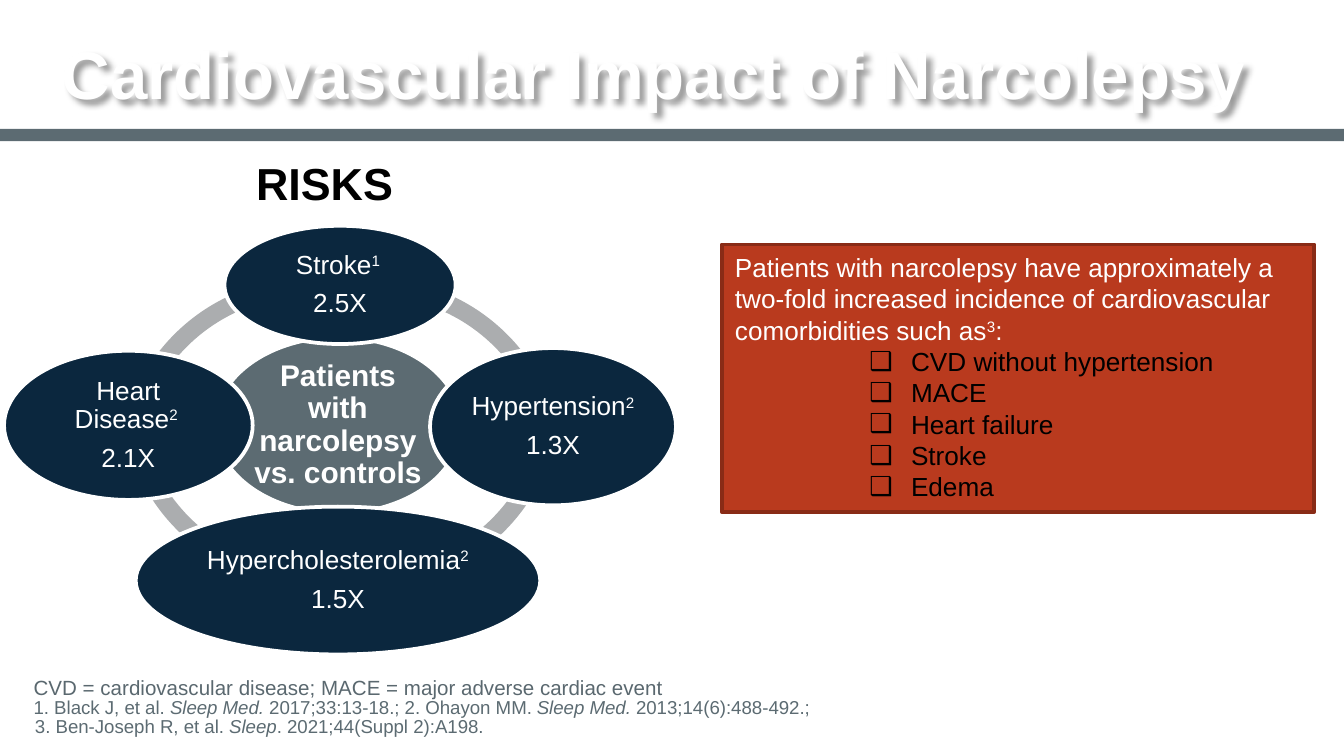
"""Build the slide on the cardiovascular impact of narcolepsy."""
from lxml import etree
from pptx import Presentation
from pptx.dml.color import RGBColor
from pptx.enum.shapes import MSO_SHAPE as Preset
from pptx.enum.text import MSO_ANCHOR as Anchor, MSO_AUTO_SIZE as AutoSize, PP_ALIGN as Align
from pptx.oxml.ns import qn
from pptx.util import Inches, Pt

COLORS = {
    "white": "FFFFFF", "black": "000000", "slate": "5C6B72", "note": "5A686F",
    "navy": "0B273E", "arc": "ABADAF", "red": "B93A1E", "red_edge": "892B16",
}
FONT = "Arial"
TITLE = "Cardiovascular Impact of Narcolepsy"
ARCS = [
    (0.88, 2.07, 116.1, 167.61),
    (0.9, 1.51, 49.22, 102.2),
    (1.32, 1.52, 5.7, 59.49),
    (1.34, 2.07, 156.39, 207.9),
]
RISKS = [
    ((1.67, 1.68, 1.72, 0.88), "Stroke", "1 ", "2.5X"),
    ((3.2, 2.59, 1.83, 1.17), "Hypertension", "2", "1.3X"),
    ((1.01, 3.77, 3.01, 1.1), "Hypercholesterolemia", "2", "1.5X"),
    ((0.03, 2.61, 1.85, 1.11), "Heart Disease", "2 ", "2.1X"),
]
COMORBIDITIES = ["CVD without hypertension", "MACE", "Heart failure", "Stroke", "Edema"]
SUMMARY = ("Patients with narcolepsy have approximately a two-fold increased incidence "
           "of cardiovascular comorbidities such as")
ABBREVIATIONS = "CVD = cardiovascular disease; MACE = major adverse cardiac event"
REFERENCES = [
    ("1. Black J, et al. ", ""), ("Sleep Med.", "italic"),
    (" 2017;33:13-18.; 2. Ohayon MM. ", ""), ("Sleep Med.", "italic"),
    (" 2013;14(6):488-492.; ", ""), ("\n", ""),
    ("3. Ben-Joseph R, et al. ", ""), ("Sleep", "italic"),
    (". 2021;44(Suppl 2):A198.", ""),
]


class SlideBuilder:
    """Holds the style and the current slide."""

    def __init__(self, presentation):
        self.slide = presentation.slides.add_slide(presentation.slide_layouts[3])

    def color(self, name):
        return RGBColor.from_string(COLORS[name])

    def shape(self, preset, box, fill, line=None):
        shape = self.slide.shapes.add_shape(preset, *map(Inches, box))
        shape.shadow.inherit = False
        shape.fill.solid()
        shape.fill.fore_color.rgb = self.color(fill)
        if line:
            shape.line.color.rgb = self.color(line)
            shape.line.width = Pt(2)
        else:
            shape.line.fill.background()
        return shape

    def frame(self, shape, insets, anchor):
        frame = shape.text_frame
        frame.word_wrap = True
        frame.auto_size = AutoSize.NONE
        frame.vertical_anchor = anchor
        (frame.margin_left, frame.margin_top,
         frame.margin_right, frame.margin_bottom) = map(Inches, insets)
        return frame

    def placeholder(self, index, box, insets, anchor):
        shape = self.slide.placeholders[index]
        shape.left, shape.top, shape.width, shape.height = map(Inches, box)
        return self.frame(shape, insets, anchor)

    def paragraph(self, frame, runs, size, color, align=Align.LEFT, bold=False,
                  spacing=1, after=0, bullet=None, indent=(0, 0)):
        first = frame.paragraphs[0]
        paragraph = frame.add_paragraph() if first.runs else first
        properties = paragraph._p.get_or_add_pPr()
        properties.set("marL", str(Inches(indent[0])))
        properties.set("indent", str(Inches(indent[1])))
        if bullet:
            etree.SubElement(properties, qn("a:buFont"), typeface=FONT)
            etree.SubElement(properties, qn("a:buChar"), char=bullet)
        else:
            etree.SubElement(properties, qn("a:buNone"))
        paragraph.alignment = align
        paragraph.line_spacing = spacing
        paragraph.space_before = Pt(0)
        paragraph.space_after = Pt(after)
        for text, style in runs:
            if text == "\n":
                paragraph.add_line_break()
                continue
            run = paragraph.add_run()
            run.text = text
            run.font.name = FONT
            run.font.size = Pt(size)
            run.font.bold = bold
            run.font.italic = style == "italic"
            run.font.color.rgb = self.color(color)
            if style == "super":
                run._r.get_or_add_rPr().set("baseline", "30000")
        return paragraph

    def title(self, text):
        frame = self.placeholder(0, (0.46, 0.28, 9.09, 0.62), (0, 0.05, 0, 0.05), Anchor.MIDDLE)
        self.paragraph(frame, [(text, "")], 36, "white", bold=True, spacing=0.85)
        properties = self.slide.shapes.title._element.spPr
        effects = etree.SubElement(properties, qn("a:effectLst"))
        shadow = etree.SubElement(effects, qn("a:outerShdw"), blurRad=str(Pt(3)),
                                  dist=str(Pt(3)), dir="2700000", algn="tl", rotWithShape="0")
        black = etree.SubElement(shadow, qn("a:srgbClr"), val=COLORS["black"])
        etree.SubElement(black, qn("a:alpha"), val="40000")

    def heading(self, text):
        frame = self.placeholder(1, (0.22, 1.17, 4.39, 3.09), (0, 0.05, 0, 0.05), Anchor.TOP)
        self.paragraph(frame, [(text, "")], 24, "black", Align.CENTER, bold=True, spacing=0.85)

    def footnotes(self):
        frame = self.placeholder(2, (0, 5.05, 10, 0.57), (0.25, 0, 0, 0.13), Anchor.BOTTOM)
        layout = dict(spacing=0.85, indent=(0.01, -0.03))
        self.paragraph(frame, [(ABBREVIATIONS, "")], 11, "note", **layout)
        self.paragraph(frame, REFERENCES, 10, "slate", **layout)

    def arc(self, left, top, start, end):
        arc = self.shape(Preset.BLOCK_ARC, (left, top, 2.85, 2.85), "arc")
        for index, value in enumerate((start, end, 0.046)):
            arc.adjustments[index] = value

    def ellipse(self, box, fill, lines, size, bold=False):
        ellipse = self.shape(Preset.OVAL, box, fill, "white")
        frame = self.frame(ellipse, [0.02] * 4, Anchor.MIDDLE)
        for runs in lines:
            self.paragraph(frame, runs, size, "white", Align.CENTER, bold, 0.9, after=5.4)

    def summary(self):
        panel = self.shape(Preset.RECTANGLE, (5.37, 1.82, 4.41, 1.99), "red", "red_edge")
        frame = self.frame(panel, (0.1, 0.05, 0.1, 0.05), Anchor.TOP)
        self.paragraph(frame, [(SUMMARY, ""), ("3", "super"), (":", "")], 14, "white")
        for name in COMORBIDITIES:
            item = self.paragraph(frame, [(name, "")], 14, "black",
                                  bullet="❑", indent=(1.31, -0.31))
            item.level = 2


def main():
    presentation = Presentation()
    presentation.slide_width = Inches(10)
    presentation.slide_height = Inches(10 * 9 / 16)
    builder = SlideBuilder(presentation)
    builder.shape(Preset.RECTANGLE, (0, 0.96, 10, 0.09), "slate")
    builder.title(TITLE)
    builder.heading("RISKS")
    builder.footnotes()
    for arc in ARCS:
        builder.arc(*arc)
    builder.ellipse((1.6, 2.51, 1.83, 1.31), "slate",
                    [[("Patients with narcolepsy vs. controls", "")]], 16, bold=True)
    for box, name, note, factor in RISKS:
        builder.ellipse(box, "navy", [[(name, ""), (note, "super")], [(factor, "")]], 14)
    builder.summary()
    presentation.save("out.pptx")


if __name__ == "__main__":
    main()
